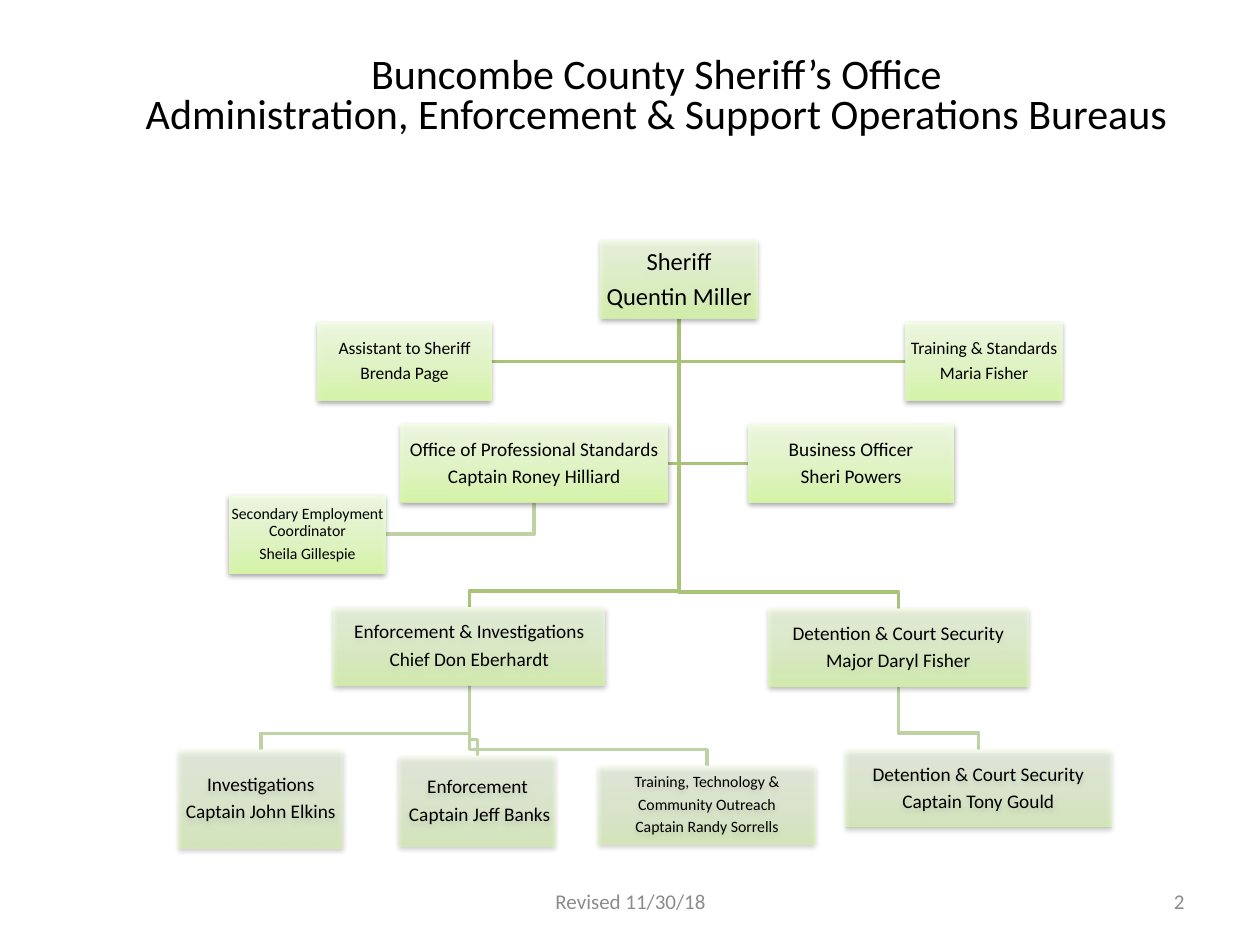
from dataclasses import dataclass

from pptx import Presentation
from pptx.dml.color import RGBColor
from pptx.enum.shapes import MSO_SHAPE
from pptx.enum.text import MSO_ANCHOR, PP_ALIGN
from pptx.oxml import parse_xml
from pptx.util import Inches, Pt

BLACK = RGBColor(0x00, 0x00, 0x00)
GRAY = RGBColor(0x8C, 0x8C, 0x8C)
GREEN = RGBColor(0xA9, 0xC3, 0x79)
PALE_GREEN = RGBColor(0xC0, 0xD2, 0xA4)
GRADIENT = (
    (0, RGBColor(0xDA, 0xFD, 0xA7)),
    (35, RGBColor(0xE4, 0xFC, 0xC2)),
    (100, RGBColor(0xF5, 0xFF, 0xE7)),
)
FONT = "Calibri"
NAMESPACE = 'xmlns:a="http://schemas.openxmlformats.org/drawingml/2006/main"'
ROW = 0.62
BEND = 0.13


@dataclass
class Post:
    """One box of the organization chart, in inches, with its text."""

    left: float
    top: float
    width: float
    lines: tuple
    size: int = 11
    opacity: int = 90
    height: float = ROW

    @property
    def center(self):
        """Return the horizontal middle."""
        return self.left + self.width / 2

    @property
    def middle(self):
        """Return the vertical middle."""
        return self.top + self.height / 2

    @property
    def bottom(self):
        """Return the lower edge."""
        return self.top + self.height


SHERIFF = Post(4.77, 1.91, 1.24, ("Sheriff", "Quentin Miller"), 14, 80)
ASSISTANT = Post(2.52, 2.56, 1.38, ("Assistant to Sheriff", "Brenda Page"), 10)
TRAINING = Post(7.19, 2.56, 1.24, ("Training & Standards", "Maria Fisher"), 10)
STANDARDS = Post(3.18, 3.37, 2.12, ("Office of Professional Standards", "Captain Roney Hilliard"))
BUSINESS = Post(5.94, 3.37, 1.63, ("Business Officer", "Sheri Powers"))
SECONDARY = Post(1.82, 3.93, 1.24, ("Secondary Employment Coordinator", "Sheila Gillespie"), 9)
CHIEF = Post(2.65, 4.82, 2.15, ("Enforcement & Investigations", "Chief Don Eberhardt"), opacity=70)
MAJOR = Post(6.1, 4.83, 2.06, ("Detention & Court Security", "Major Daryl Fisher"), opacity=70)
INVESTIGATIONS = Post(1.42, 5.95, 1.3, ("Investigations", "Captain John Elkins"), 11, 50, 0.78)
ENFORCEMENT = Post(3.17, 6, 1.24, ("Enforcement", " Captain Jeff Banks"), 11, 50, 0.72)
OUTREACH = Post(
    4.75, 6.08, 1.72,
    ("Training, Technology &", "Community Outreach", "Captain Randy Sorrells"), 9, 50,
)
DETENTION = Post(6.71, 5.95, 2.11, ("Detention & Court Security", "Captain Tony Gould"), opacity=50)

POSTS = (
    SHERIFF, CHIEF, INVESTIGATIONS, OUTREACH, ENFORCEMENT, MAJOR,
    DETENTION, ASSISTANT, STANDARDS, SECONDARY, BUSINESS, TRAINING,
)
SIDE_LINKS = (
    (SHERIFF, TRAINING, GREEN),
    (SHERIFF, BUSINESS, GREEN),
    (STANDARDS, SECONDARY, PALE_GREEN),
    (SHERIFF, STANDARDS, GREEN),
    (SHERIFF, ASSISTANT, GREEN),
)
DOWN_LINKS = (
    (MAJOR, DETENTION, PALE_GREEN),
    (SHERIFF, MAJOR, GREEN),
    (CHIEF, ENFORCEMENT, PALE_GREEN),
    (CHIEF, OUTREACH, PALE_GREEN),
    (CHIEF, INVESTIGATIONS, PALE_GREEN),
    (SHERIFF, CHIEF, GREEN),
)


def write_text(frame, lines, size, color=BLACK, align=PP_ALIGN.CENTER, spacing=None, after=None):
    """Fill a text frame with one paragraph per line."""
    frame.word_wrap = True
    frame.vertical_anchor = MSO_ANCHOR.MIDDLE
    for index, line in enumerate(lines):
        para = frame.add_paragraph() if index else frame.paragraphs[0]
        para.alignment = align
        if spacing:
            para.line_spacing = spacing
        if after:
            para._p.get_or_add_pPr().append(parse_xml(
                f'<a:spcAft {NAMESPACE}><a:spcPct val="{after * 1000}"/></a:spcAft>'))
        span = para.add_run()
        span.text = line
        span.font.name = FONT
        span.font.size = Pt(size)
        span.font.color.rgb = color


def add_label(page, left, top, width, height, lines, size, **text_format):
    """Add a text box in the given place."""
    box = page.shapes.add_textbox(Inches(left), Inches(top), Inches(width), Inches(height))
    write_text(box.text_frame, lines, size, **text_format)


def style_box(box, opacity):
    """Give a box its translucent vertical gradient and soft shadow."""
    box.line.fill.background()
    box.shadow.inherit = False
    stops = "".join(
        f'<a:gs pos="{position * 1000}"><a:srgbClr val="{color}">'
        f'<a:alpha val="{opacity * 1000}"/></a:srgbClr></a:gs>'
        for position, color in GRADIENT
    )
    properties = box._element.spPr
    properties.prstGeom.addnext(parse_xml(
        f'<a:gradFill {NAMESPACE} rotWithShape="1"><a:gsLst>{stops}</a:gsLst>'
        '<a:lin ang="16200000" scaled="0"/></a:gradFill>'))
    properties.effectLst.append(parse_xml(
        f'<a:outerShdw {NAMESPACE} blurRad="{Pt(3.1)}" dist="{Pt(1.6)}" dir="5400000" '
        'rotWithShape="0"><a:srgbClr val="000000"><a:alpha val="38000"/></a:srgbClr>'
        '</a:outerShdw>'))


def add_post(page, post):
    """Add one box of the organization chart."""
    box = page.shapes.add_shape(
        MSO_SHAPE.RECTANGLE, Inches(post.left), Inches(post.top),
        Inches(post.width), Inches(post.height))
    style_box(box, post.opacity)
    frame = box.text_frame
    frame.margin_left = frame.margin_right = Inches(0.01)
    frame.margin_top = frame.margin_bottom = Inches(0.01)
    write_text(frame, post.lines, post.size, spacing=0.9, after=35)


def add_path(page, points, color):
    """Draw an open line through the points."""
    start, *rest = [(Inches(x), Inches(y)) for x, y in points]
    builder = page.shapes.build_freeform(*start)
    builder.add_line_segments(rest, close=False)
    path = builder.convert_to_shape()
    path.fill.background()
    path.line.color.rgb = color
    path.line.width = Pt(2)
    path.shadow.inherit = False


def link_side(page, parent, child, color):
    """Link the bottom of a box to the near side of another."""
    x = parent.center
    edge = child.left if child.center > x else child.left + child.width
    add_path(page, ((x, parent.bottom), (x, child.middle), (edge, child.middle)), color)


def link_down(page, parent, child, color):
    """Link the bottom of a box to the top of another."""
    turn = child.top - BEND
    add_path(page, (
        (parent.center, parent.bottom), (parent.center, turn),
        (child.center, turn), (child.center, child.top)), color)


def main():
    """Build the slide and save it."""
    deck = Presentation()
    deck.slide_width, deck.slide_height = Inches(10), Inches(7.5)
    page = deck.slides.add_slide(deck.slide_layouts[6])
    for link in SIDE_LINKS:
        link_side(page, *link)
    for link in DOWN_LINKS:
        link_down(page, *link)
    for post in POSTS:
        add_post(page, post)
    title = ("Buncombe County Sheriff’s Office",
             "Administration, Enforcement & Support Operations Bureaus")
    add_label(page, 0.92, 0.3, 8.58, 0.95, title, 24, spacing=0.8)
    add_label(page, 3.42, 6.95, 3.17, 0.4, ("Revised 11/30/18",), 12, color=GRAY)
    add_label(page, 7.17, 6.95, 2.33, 0.4, ("2",), 12, color=GRAY, align=PP_ALIGN.RIGHT)
    deck.save("out.pptx")


if __name__ == "__main__":
    main()
